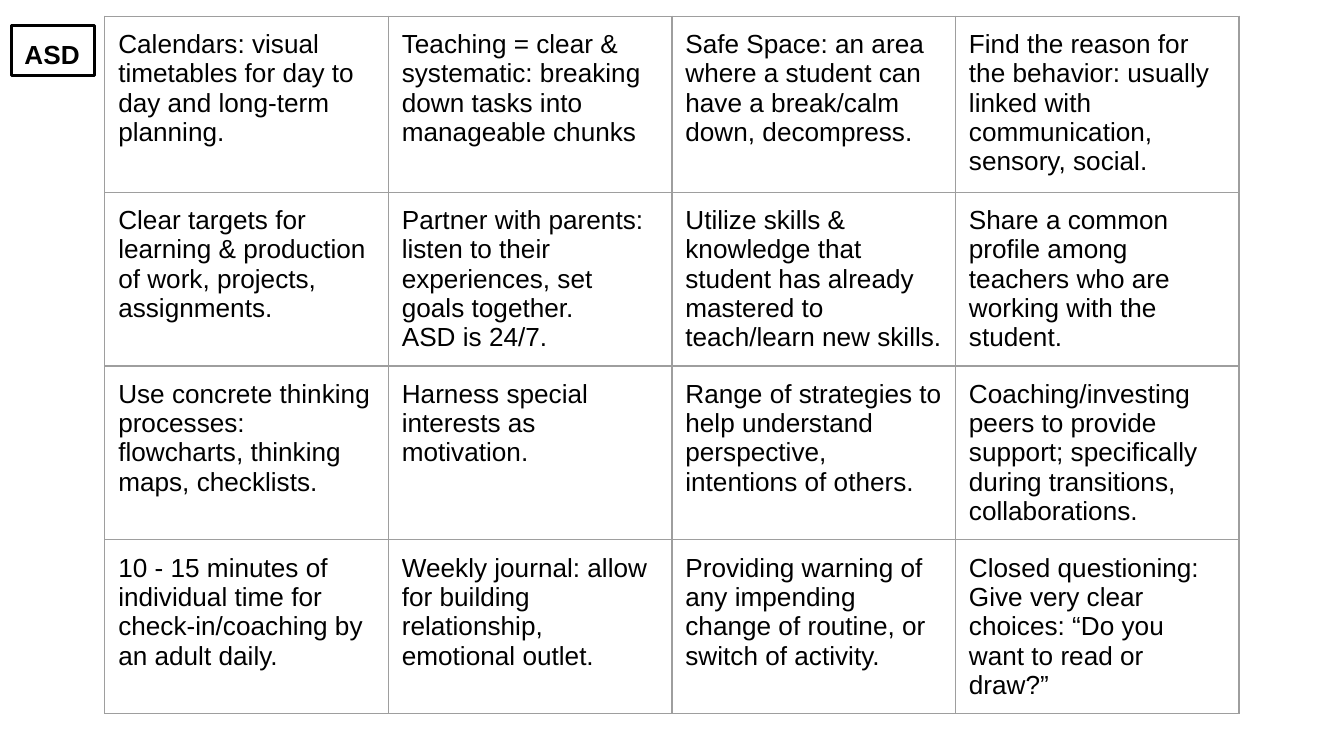
from dataclasses import dataclass
from typing import NamedTuple

from lxml.etree import SubElement
from pptx import Presentation
from pptx.dml.color import RGBColor
from pptx.enum.shapes import MSO_SHAPE
from pptx.enum.text import MSO_ANCHOR, PP_ALIGN
from pptx.oxml.ns import qn
from pptx.util import Inches, Pt

SLIDE_WIDTH = Inches(10)
SLIDE_HEIGHT = SLIDE_WIDTH * 9 // 16


@dataclass(frozen=True)
class Theme:
    font: str = "Arial"
    text_size: float = 14
    ink: str = "000000"
    grid_line: str = "9E9E9E"
    grid_weight: float = 0.75
    label_weight: float = 1.5
    inset: float = 0.1


class Area(NamedTuple):
    """A rectangle in percent of the slide's width and height."""
    left: float
    top: float
    width: float
    height: float


THEME = Theme()
LABEL_AREA = Area(0.83, 3.33, 6.2, 6.72)
GRID_AREA = Area(7.8, 2.15, 84.4, 95.29)
ROW_SHARES = (23.29, 22.4, 22.4, 22.4)

# One tuple per row; a line break starts a new paragraph.
STRATEGIES = (
    (
        "Calendars: visual timetables for day to day and long-term planning.",
        "Teaching = clear & systematic: breaking down tasks into manageable chunks",
        "Safe Space: an area where a student can have a break/calm down, decompress.",
        "Find the reason for the behavior: usually linked with communication, sensory, social.",
    ),
    (
        "Clear targets for learning & production of work, projects, assignments.",
        "Partner with parents: listen to their experiences, set goals together.\nASD is 24/7.",
        "Utilize skills & knowledge that student has already mastered to teach/learn new skills.",
        "Share a common profile among teachers who are working with the student.",
    ),
    (
        "Use concrete thinking processes: flowcharts, thinking maps, checklists.",
        "Harness special interests as motivation.",
        "Range of strategies to help understand perspective, intentions of others.",
        "Coaching/investing peers to provide support; specifically during transitions, collaborations.",
    ),
    (
        "10 - 15 minutes of individual time for check-in/coaching by an adult daily.",
        "Weekly journal: allow for building relationship, emotional outlet.",
        "Providing warning of any impending change of routine, or switch of activity.",
        "Closed questioning: Give very clear choices: “Do you want to read or draw?”",
    ),
)


def across(percent: float) -> int:
    return round(SLIDE_WIDTH * percent / 100)


def down(percent: float) -> int:
    return round(SLIDE_HEIGHT * percent / 100)


def place(area: Area) -> tuple[int, int, int, int]:
    return across(area.left), down(area.top), across(area.width), down(area.height)


def write(holder, text: str, bold: bool = False) -> None:
    """Set insets and text on a table cell or a text frame."""
    for side in ("left", "top", "right", "bottom"):
        setattr(holder, f"margin_{side}", Inches(THEME.inset))
    holder.vertical_anchor = MSO_ANCHOR.TOP
    frame = getattr(holder, "text_frame", holder)
    frame.word_wrap = True
    for index, line in enumerate(text.split("\n")):
        para = frame.add_paragraph() if index else frame.paragraphs[0]
        para.alignment = PP_ALIGN.LEFT
        span = para.add_run()
        span.text = line
        span.font.name = THEME.font
        span.font.size = Pt(THEME.text_size)
        span.font.bold = bold
        span.font.color.rgb = RGBColor.from_string(THEME.ink)


def draw_borders(cell) -> None:
    properties = cell._tc.get_or_add_tcPr()
    for edge in ("a:lnL", "a:lnR", "a:lnT", "a:lnB"):
        line = SubElement(properties, qn(edge), w=str(Pt(THEME.grid_weight)))
        fill = SubElement(line, qn("a:solidFill"))
        SubElement(fill, qn("a:srgbClr"), val=THEME.grid_line)


def add_strategy_grid(page) -> None:
    columns = len(STRATEGIES[0])
    holder = page.shapes.add_table(len(STRATEGIES), columns, *place(GRID_AREA))
    table = holder.table
    table.first_row = table.horz_banding = False
    for column in table.columns:
        column.width = across(GRID_AREA.width / columns)
    for row, share, texts in zip(table.rows, ROW_SHARES, STRATEGIES):
        row.height = down(share)
        for cell, text in zip(row.cells, texts):
            write(cell, text)
            draw_borders(cell)
            cell.fill.background()
    holder.height = down(GRID_AREA.height)


def add_label(page, text: str) -> None:
    box = page.shapes.add_shape(MSO_SHAPE.RECTANGLE, *place(LABEL_AREA))
    box.shadow.inherit = False
    box.fill.background()
    box.line.color.rgb = RGBColor.from_string(THEME.ink)
    box.line.width = Pt(THEME.label_weight)
    write(box.text_frame, text, bold=True)


def main() -> None:
    deck = Presentation()
    deck.slide_width, deck.slide_height = SLIDE_WIDTH, SLIDE_HEIGHT
    page = deck.slides.add_slide(deck.slide_layouts[6])
    add_strategy_grid(page)
    add_label(page, "ASD")
    deck.save("out.pptx")


if __name__ == "__main__":
    main()
